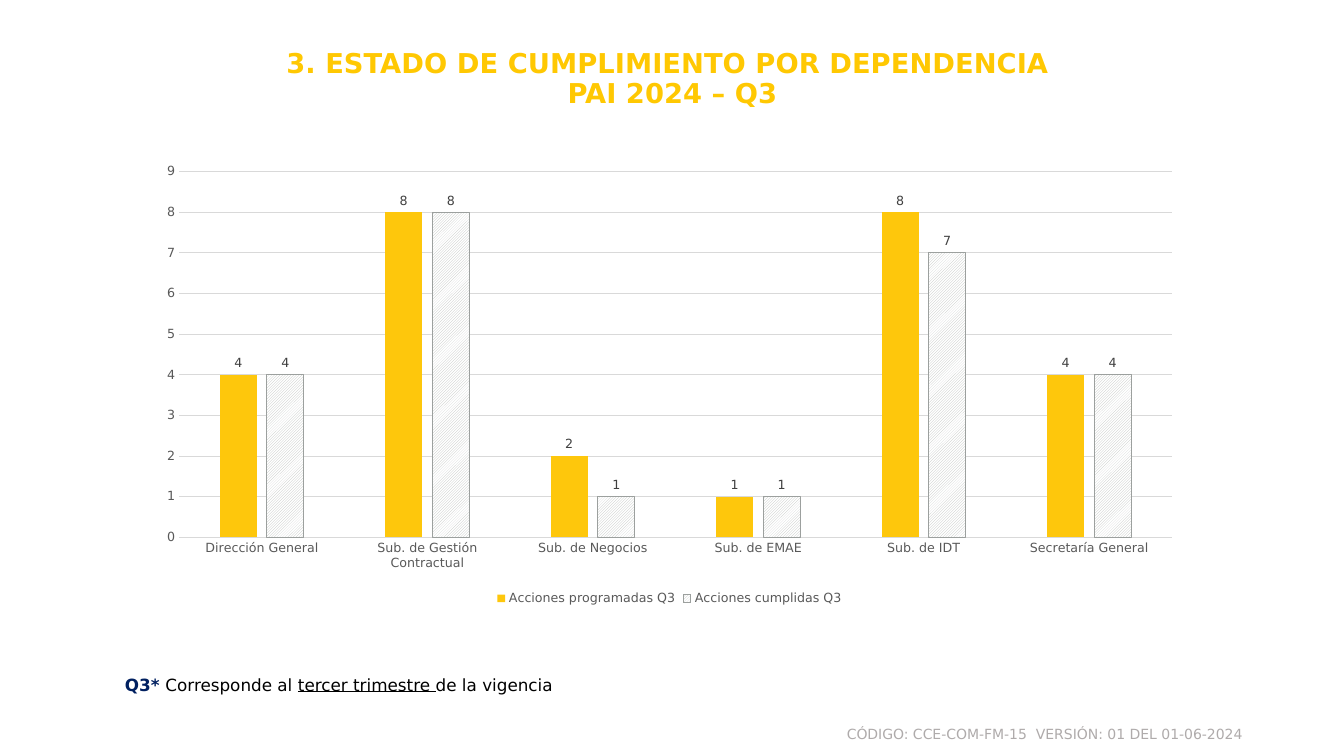
from pptx import Presentation
from pptx.chart.data import CategoryChartData
from pptx.dml.color import RGBColor
from pptx.enum import chart as c, dml, text
from pptx.util import Inches, Pt

FONT = "DejaVu Sans"
TITLE_YELLOW = RGBColor(0xFF, 0xC8, 0x02)
BAR_YELLOW = RGBColor(0xFE, 0xC7, 0x0C)
NAVY = RGBColor(0x00, 0x20, 0x60)
BLACK = RGBColor(0, 0, 0)
WHITE = RGBColor(0xFF, 0xFF, 0xFF)
FOOTER_GRAY = RGBColor(0xAF, 0xAB, 0xAB)
AXIS_GRAY = RGBColor(0x59, 0x59, 0x59)
LABEL_GRAY = RGBColor(0x40, 0x40, 0x40)
GRID_GRAY = RGBColor(0xD9, 0xD9, 0xD9)
HATCH_GRAY = RGBColor(0xBD, 0xC0, 0xBE)
OUTLINE_GRAY = RGBColor(0x9C, 0xA0, 0x9E)


def set_font(font, size, color, bold=False):
    font.name = FONT
    font.size = Pt(size)
    font.bold = bold
    font.color.rgb = color


def add_text_frame(left, top, width, height):
    frame = slide.shapes.add_textbox(Inches(left), Inches(top), Inches(width), Inches(height)).text_frame
    frame.word_wrap = True
    return frame


presentation = Presentation()
presentation.slide_width = Inches(13.33)
presentation.slide_height = Inches(7.5)
slide = presentation.slides.add_slide(presentation.slide_layouts[6])

footer = add_text_frame(4.8, 7.15, 7.62, 0.27).paragraphs[0]
footer.text = "CÓDIGO: CCE-COM-FM-15  VERSIÓN: 01 DEL 01-06-2024"
footer.alignment = text.PP_ALIGN.RIGHT
set_font(footer.font, 10, FOOTER_GRAY)

title = add_text_frame(0.92, 0.45, 11.5, 1.09)
title.text = "3. ESTADO DE CUMPLIMIENTO POR DEPENDENCIA \nPAI 2024 – Q3"
for paragraph in title.paragraphs:
    paragraph.alignment = text.PP_ALIGN.CENTER
    paragraph.line_spacing = 0.9
    set_font(paragraph.font, 19.5, TITLE_YELLOW, True)

note = add_text_frame(1.14, 6.64, 6.03, 0.3).paragraphs[0]
for words, color, bold, underline in [
    ("Q3* ", NAVY, True, False),
    ("Corresponde al ", BLACK, False, False),
    ("tercer trimestre ", BLACK, False, True),
    ("de la vigencia", BLACK, False, False),
]:
    run = note.add_run()
    run.text = words
    set_font(run.font, 12, color, bold)
    run.font.underline = underline

data = CategoryChartData()
data.categories = [
    "Dirección General",
    "Sub. de Gestión Contractual",
    "Sub. de Negocios",
    "Sub. de EMAE",
    "Sub. de IDT",
    "Secretaría General",
]
data.add_series("Acciones programadas Q3", [4, 8, 2, 1, 8, 4])
data.add_series("Acciones cumplidas Q3", [4, 8, 1, 1, 7, 4])
chart = slide.shapes.add_chart(
    c.XL_CHART_TYPE.COLUMN_CLUSTERED, Inches(1.45), Inches(1.54), Inches(10.38), Inches(4.51), data
).chart
set_font(chart.font, 10, BLACK)
chart.has_title = False
chart.has_legend = True
chart.legend.position = c.XL_LEGEND_POSITION.BOTTOM
chart.legend.include_in_layout = False
set_font(chart.legend.font, 9, AXIS_GRAY)

for axis in (chart.category_axis, chart.value_axis):
    axis.major_tick_mark = c.XL_TICK_MARK.NONE
    axis.minor_tick_mark = c.XL_TICK_MARK.NONE
    set_font(axis.tick_labels.font, 9, AXIS_GRAY)
chart.value_axis.minimum_scale = 0
chart.value_axis.maximum_scale = 9
chart.value_axis.major_unit = 1
chart.value_axis.format.line.fill.background()
for line in (chart.category_axis.format.line, chart.value_axis.major_gridlines.format.line):
    line.color.rgb = GRID_GRAY
    line.width = Pt(0.75)

plot = chart.plots[0]
plot.gap_width = 219
plot.overlap = -27
plot.vary_by_categories = False
for series in plot.series:
    labels = series.data_labels
    labels.show_value = True
    labels.position = c.XL_LABEL_POSITION.OUTSIDE_END
    set_font(labels.font, 9, LABEL_GRAY)

planned, completed = plot.series
planned.format.fill.solid()
planned.format.fill.fore_color.rgb = BAR_YELLOW
hatch = completed.format.fill
hatch.patterned()
hatch.pattern = dml.MSO_PATTERN.LIGHT_UPWARD_DIAGONAL
hatch.fore_color.rgb = HATCH_GRAY
hatch.back_color.rgb = WHITE
completed.format.line.color.rgb = OUTLINE_GRAY
completed.format.line.width = Pt(0.75)

presentation.save("out.pptx")
